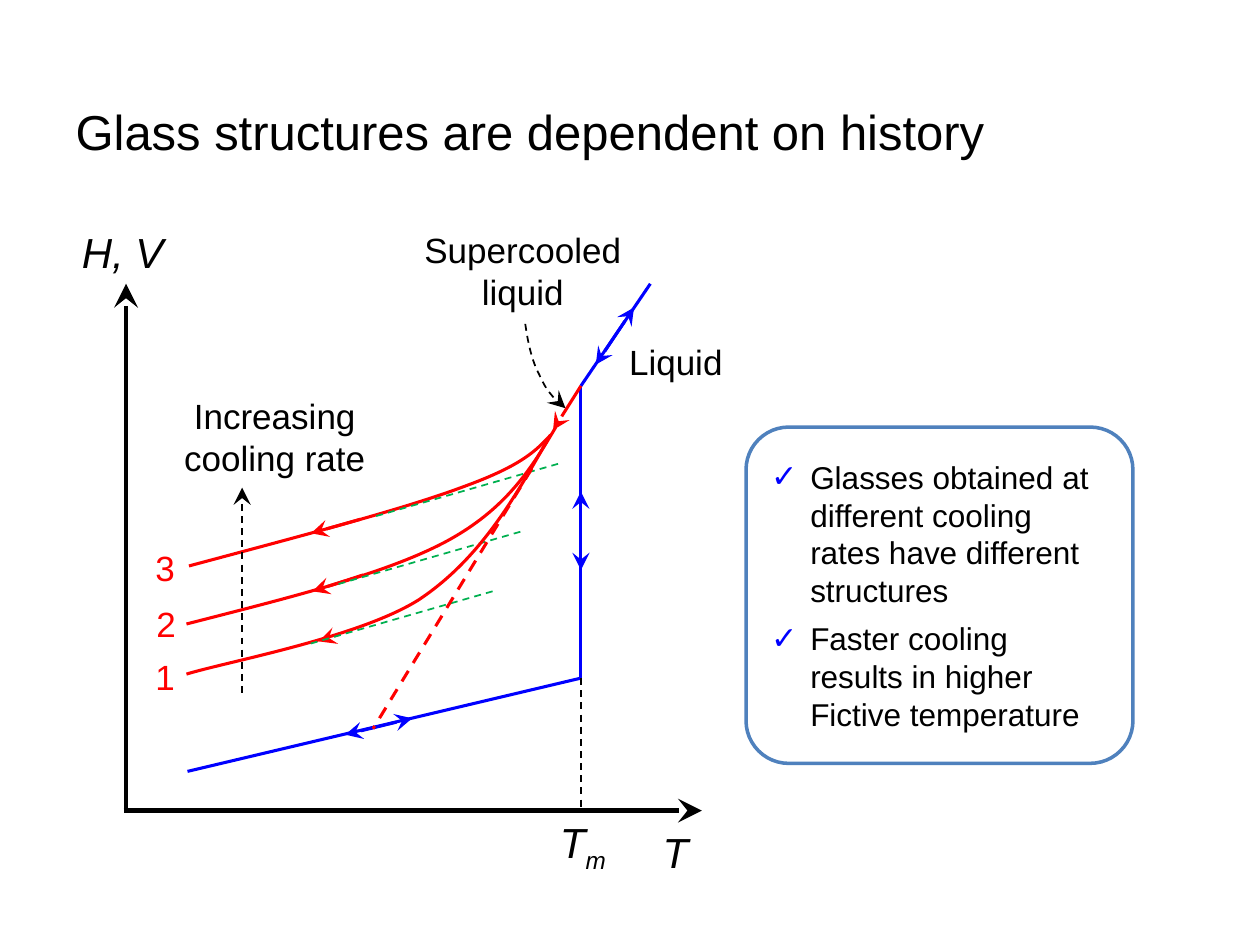
import lxml.etree
import pptx
import pptx.dml.color
import pptx.enum.dml
import pptx.enum.shapes
import pptx.enum.text
import pptx.oxml.ns
import pptx.util

Cm, Pt = pptx.util.Cm, pptx.util.Pt
RGB = pptx.dml.color.RGBColor
ALIGN, ANCHOR = pptx.enum.text.PP_ALIGN, pptx.enum.text.MSO_ANCHOR
qn = pptx.oxml.ns.qn

BLACK = RGB(0x00, 0x00, 0x00)
WHITE = RGB(0xFF, 0xFF, 0xFF)
BLUE = RGB(0x00, 0x00, 0xFF)
RED = RGB(0xFF, 0x00, 0x00)
GREEN = RGB(0x00, 0xB0, 0x50)
PANEL_BLUE = RGB(0x4F, 0x81, 0xBD)
FONT = "Arial"


def child(parent, tag, **attributes):
    return lxml.etree.SubElement(parent, qn(tag), **attributes)


def write(paragraph, text, size=20, color=BLACK, italic=False, align=None, baseline=None):
    """Add a formatted run to the paragraph."""
    run = paragraph.add_run()
    run.text = text
    font = run.font
    font.name, font.size, font.italic = FONT, Pt(size), italic
    font.color.rgb = color
    if align is not None:
        paragraph.alignment = align
    if baseline is not None:
        font._element.set("baseline", str(baseline))


def style_line(line, color, width, dashed=False, head=False, tail=False):
    line.color.rgb = color
    line.width = Pt(width)
    if dashed:
        line.dash_style = pptx.enum.dml.MSO_LINE.DASH
    for tag, wanted in (("a:headEnd", head), ("a:tailEnd", tail)):
        if wanted:
            child(line._ln, tag, type="stealth", w="lg", len="lg")


class Diagram:
    """Draws on a slide in centimetres measured from a given corner."""

    def __init__(self, slide, left, top):
        self.shapes, self.left, self.top = slide.shapes, left, top

    def at(self, x, y):
        return Cm(self.left + x), Cm(self.top + y)

    def line(self, start, end, color=BLACK, width=1.75, **ends):
        connector = self.shapes.add_connector(
            pptx.enum.shapes.MSO_CONNECTOR.STRAIGHT, *self.at(*start), *self.at(*end))
        style_line(connector.line, color, width, **ends)
        child(connector._element.spPr, "a:effectLst")

    def curve(self, points, color=BLACK, width=1.75, **ends):
        """Draw cubic Béziers: a start point, then three points for each segment."""
        start, *others = [self.at(*point) for point in points]
        builder = self.shapes.build_freeform(*start)
        builder.add_line_segments(others, close=False)
        outline = builder.convert_to_shape()
        legs = list(outline._element.iter(qn("a:lnTo")))
        for first in range(0, len(legs), 3):
            bezier = child(legs[0].getparent() if first == 0 else bezier.getparent(),
                           "a:cubicBezTo")
            for leg in legs[first:first + 3]:
                bezier.append(leg[0])
                leg.getparent().remove(leg)
        outline.fill.background()
        outline.shadow.inherit = False
        style_line(outline.line, color, width, **ends)

    def label(self, x, y, width, height, lines, wrap=True, **style):
        frame = self.shapes.add_textbox(*self.at(x, y), Cm(width), Cm(height)).text_frame
        frame.word_wrap = wrap
        for index, text in enumerate(lines):
            paragraph = frame.add_paragraph() if index else frame.paragraphs[0]
            write(paragraph, text, **style)
        return frame


def add_title(slide, left, top, width, height):
    title = slide.shapes.title
    title.left, title.top, title.width, title.height = map(Cm, (left, top, width, height))
    title.text_frame.vertical_anchor = ANCHOR.MIDDLE
    write(title.text_frame.paragraphs[0], "Glass structures are dependent on history",
          size=28, align=ALIGN.LEFT)


def add_cooling_diagram(slide, left, top):
    diagram = Diagram(slide, left, top)
    melting_x, melt_y, crystal_y = 9.17, 3.33, 9.22
    melt, crystal = (melting_x, melt_y), (melting_x, crystal_y)

    # Axes
    diagram.line((0, 11.86), (0, 1.27), width=2.75, tail=True)
    diagram.line((-0.05, 11.89), (11.61, 11.89), width=2.75, tail=True)
    axis_text = dict(wrap=False, size=24, italic=True)
    diagram.label(-1.14, 0, 2.18, 1.27, ["H, V"], **axis_text)
    diagram.label(10.57, 12.09, 1.04, 1.27, ["T"], **axis_text)
    melting_point = diagram.label(8.46, 11.89, 1.5, 1.27, ["T"], align=ALIGN.CENTER, **axis_text)
    write(melting_point.paragraphs[0], "m", size=24, italic=True, baseline=-25000)

    # Equilibrium path: liquid, melting, crystal, each with a two-way arrow
    for start, end in (((10.57, 1.27), melt), (melt, crystal), (crystal, (1.24, 11.1))):
        diagram.line(start, end, BLUE)
    diagram.line(crystal, (melting_x, 11.81), width=1, dashed=True)
    for start, end in (((10.24, 1.75), (9.47, 2.9)),
                       ((melting_x, 5.46), (melting_x, 7.04)),
                       ((5.77, 10.03), (4.42, 10.36))):
        diagram.line(start, end, BLUE, head=True, tail=True)

    # Glass curves: points, arrow, start of the tangent, corner of the number
    glasses = {
        "3": ([(8.56, 4.32), (8.28, 4.62), (8, 4.93), (6.81, 5.36),
               (5.59, 5.82), (3.43, 6.38), (1.27, 6.96)],
              ((4.72, 6.02), (3.73, 6.3)), (8.71, 4.9), (0.13, 6.45)),
        "2": ([(8.66, 4.17), (8.18, 4.98), (7.67, 5.82), (6.43, 6.48),
               (5.18, 7.14), (3.2, 7.62), (1.22, 8.13)],
              ((4.78, 7.14), (3.76, 7.47)), (7.95, 6.27), (0.15, 7.57)),
        "1": ([(8.48, 4.45), (7.8, 5.66), (7.09, 6.86), (5.89, 7.65),
               (4.67, 8.41), (2.03, 8.89), (1.22, 9.14)],
              ((4.32, 8.33), (3.89, 8.48)), (7.39, 7.47), (0.13, 8.64)),
    }
    for number, (points, arrow, (x, y), corner) in glasses.items():
        diagram.curve(points, RED)
        diagram.line(*arrow, RED, tail=True)
        diagram.line((x, y), (x - 3.76, y + 1.08), GREEN, width=1, dashed=True)
        diagram.label(*corner, 1.32, 1.12, [number], color=RED, align=ALIGN.CENTER)
    diagram.line(melt, (8.61, 4.22), RED, tail=True)
    diagram.line((8.18, 5), (4.98, 10.24), RED, dashed=True)

    # Annotations
    diagram.label(5.56, 0.03, 4.88, 1.96, ["Supercooled liquid"], align=ALIGN.CENTER)
    diagram.curve([(8.05, 2.08), (8.1, 2.44), (8.18, 2.82), (8.33, 3.1),
                   (8.46, 3.38), (8.64, 3.63), (8.86, 3.78)], width=1, dashed=True, tail=True)
    diagram.label(9.55, 2.29, 3.07, 1.12, ["Liquid"], align=ALIGN.CENTER)
    diagram.label(0.56, 3.38, 4.88, 1.96, ["Increasing", "cooling rate"], align=ALIGN.CENTER)
    diagram.line((2.34, 5.38), (2.34, 9.55), width=1, dashed=True, head=True)


def add_check_bullet(paragraph):
    properties = paragraph._p.get_or_add_pPr()
    properties.set("marL", str(Cm(0.79)))
    properties.set("indent", str(-Cm(0.79)))
    child(child(properties, "a:buClr"), "a:srgbClr", val=str(BLUE))
    child(properties, "a:buFont", typeface=FONT)
    child(properties, "a:buChar", char="✓")


def add_findings(slide, left, top, width, height):
    panel = slide.shapes.add_shape(pptx.enum.shapes.MSO_SHAPE.ROUNDED_RECTANGLE,
                                   *map(Cm, (left, top, width, height)))
    panel.adjustments[0] = 0.127
    panel.shadow.inherit = False
    panel.fill.solid()
    panel.fill.fore_color.rgb = WHITE
    style_line(panel.line, PANEL_BLUE, 2)

    inset = 0.25
    findings = slide.placeholders[1]
    findings.left, findings.top, findings.width, findings.height = map(
        Cm, (left + inset, top + inset, width - 2 * inset, height - 2 * inset))
    panel._element.addnext(findings._element)
    frame = findings.text_frame
    frame.auto_size = pptx.enum.text.MSO_AUTO_SIZE.NONE
    frame.vertical_anchor = ANCHOR.MIDDLE
    for index, text in enumerate((
            "Glasses obtained at different cooling rates have different structures",
            "Faster cooling results in higher Fictive temperature")):
        paragraph = frame.add_paragraph() if index else frame.paragraphs[0]
        add_check_bullet(paragraph)
        paragraph.space_before = Pt(6 if index else 0)
        write(paragraph, text, size=18)


def main():
    presentation = pptx.Presentation()
    presentation.slide_width, presentation.slide_height = Cm(25.4), Cm(19.05)
    slide = presentation.slides.add_slide(presentation.slide_layouts[1])
    add_title(slide, 1.27, 1.27, 22.66, 2.74)
    add_cooling_diagram(slide, 2.54, 4.45)
    add_findings(slide, 15.04, 8.61, 7.8, 6.78)
    presentation.save("out.pptx")


if __name__ == "__main__":
    main()
